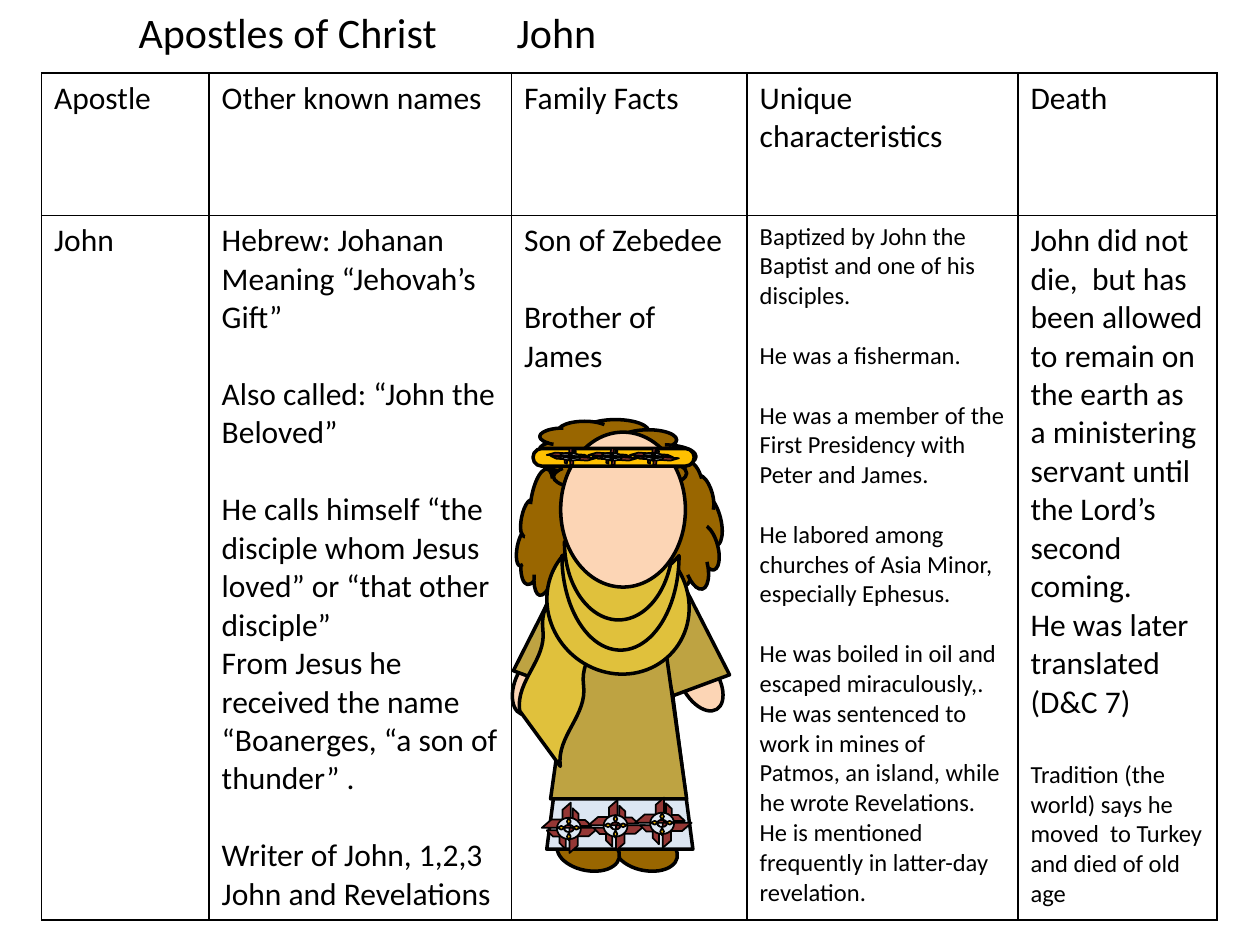
from math import cos, radians, sin

from lxml.etree import SubElement
from pptx import Presentation
from pptx.dml.color import RGBColor
from pptx.enum.shapes import MSO_SHAPE as Shape
from pptx.enum.text import MSO_ANCHOR, MSO_AUTO_SIZE, PP_ALIGN
from pptx.oxml.ns import qn
from pptx.util import Inches, Pt

COLORS = {
    "ink": "000000", "hair": "996600", "skin": "FCD5B5", "robe": "BEA342",
    "shawl": "E0C13C", "trim": "DCE6F2", "petal": "953735", "gold": "FFC000",
}
GRID_COLUMNS, GRID_ROWS = 100, 75
LINE_HEIGHT = 1.22  # Calibri line height as a share of its size


def color(name):
    return RGBColor.from_string(COLORS[name])


class SlideBuilder:
    """Style and current slide; lengths are grid columns and rows."""

    font = "Calibri"

    def __init__(self, deck):
        self.slide = deck.slides.add_slide(deck.slide_layouts[5])
        self.column = deck.slide_width / GRID_COLUMNS
        self.row = deck.slide_height / GRID_ROWS
        self.figure = None

    def box(self, left, top, width, height):
        return (round(left * self.column), round(top * self.row),
                round(width * self.column), round(height * self.row))

    def style(self, paragraph, size):
        paragraph.alignment = PP_ALIGN.LEFT
        paragraph.font.name = self.font
        paragraph.font.size = Pt(size)
        paragraph.font.color.rgb = color("ink")

    def title(self, text, *place):
        title = self.slide.shapes.title
        title.left, title.top, title.width, title.height = self.box(*place)
        frame = title.text_frame
        frame.text = text
        frame.auto_size = MSO_AUTO_SIZE.NONE
        frame.vertical_anchor = MSO_ANCHOR.TOP
        self.style(frame.paragraphs[0], 24)

    def table(self, left, top, widths, heights, content):
        place = self.box(left, top, sum(widths), sum(heights))
        table = self.slide.shapes.add_table(len(heights), len(widths), *place).table
        table.first_row = table.horz_banding = False
        for column, width in zip(table.columns, widths):
            column.width = round(width * self.column)
        for row, height in zip(table.rows, heights):
            row.height = round(height * self.row)
        for row, texts in zip(table.rows, content):
            for cell, blocks in zip(row.cells, texts):
                self.cell(cell, blocks)

    def cell(self, cell, blocks):
        """Fill a cell with (size, gap in points before, text) paragraphs."""
        frame = cell.text_frame
        for index, (size, gap, text) in enumerate(blocks):
            paragraph = frame.add_paragraph() if index else frame.paragraphs[0]
            paragraph.text = text
            paragraph.space_before = Pt(gap)
            self.style(paragraph, size)
        properties = cell._tc.get_or_add_tcPr()
        for edge in ("a:lnL", "a:lnR", "a:lnT", "a:lnB"):
            border = SubElement(properties, qn(edge), w=str(Pt(1)))
            fill = SubElement(border, qn("a:solidFill"))
            SubElement(fill, qn("a:srgbClr"), val=COLORS["ink"])
        cell.fill.background()

    def start_figure(self):
        self.figure = self.slide.shapes.add_group_shape()

    def piece(self, kind, fill, place, turn=0, flip=False, adjust=(), line=2):
        piece = self.figure.shapes.add_shape(kind, *self.box(*place))
        piece.shadow.inherit = False
        piece.rotation = turn % 360
        for index, value in enumerate(adjust):
            piece.adjustments[index] = value
        if flip:
            piece._element.spPr.find(qn("a:xfrm")).set("flipH", "1")
        piece.fill.solid()
        piece.fill.fore_color.rgb = color(fill)
        piece.line.color.rgb = color("ink")
        piece.line.width = Pt(line)

    def flower(self, x, y, across=1.0, down=1.0, tilt=0.0):
        """Draw the flower around (x, y), squeezed and then tilted."""
        angle = radians(tilt)
        for kind, fill, dx, dy, width, height, turn, flip, adjust in FLOWER:
            dx, dy = dx * across, dy * down
            sideways = turn % 180 == 90
            width *= down if sideways else across
            height *= across if sideways else down
            center_x = x + dx * cos(angle) - dy * sin(angle)
            center_y = y + dx * sin(angle) + dy * cos(angle)
            place = (center_x - width / 2, center_y - height / 2, width, height)
            self.piece(kind, fill, place, turn + tilt, flip, adjust, line=1)


# Flower pieces: shape, fill, centre offset, size, turn, flip, adjustments
FLOWER = [
    (Shape.HALF_FRAME, "petal", -1, -1.05, 2.3, 2, 180, False, ()),
    (Shape.HALF_FRAME, "petal", 1.2, 0.95, 2.3, 2, 0, False, ()),
    (Shape.HALF_FRAME, "petal", 1.05, -0.9, 1.4, 1.5, 270, False, ()),
    (Shape.HALF_FRAME, "petal", -1, 0.9, 1.5, 1.5, 0, True, ()),
    (Shape.DONUT, "trim", 0, 0, 1.9, 1.7, 0, False, (0.33,)),
] + [
    (Shape.DIAMOND, "gold", dx, dy, 0.3, 0.6, turn, False, ())
    for dx, dy, turn in [(0, -0.55, 0), (0, 0.65, 0), (-0.6, -0.05, 90), (0.6, -0.05, 90)]
]

# Body from back to front: shape, fill, place, turn, flip, adjustments
BODY = [
    (Shape.OVAL, "hair", (48.8, 66.1, 5, 3), 10.8, True),
    (Shape.OVAL, "hair", (44.2, 66.1, 5, 3), 10.8, True),
    (Shape.TRAPEZOID, "trim", (43.4, 45.3, 11.6, 22.1), 0, True),
    (Shape.OVAL, "skin", (39.8, 52.9, 5, 2.9), 112.1, True),
    (Shape.OVAL, "skin", (53.1, 52.7, 5, 2.9), 59.2, True),
    (Shape.TRAPEZOID, "robe", (42.3, 44.6, 4.4, 9.7), 20.3, True),
    (Shape.TRAPEZOID, "robe", (51.5, 44.6, 4.8, 10.1), 339.7),
    (Shape.CLOUD, "hair", (41.3, 36.4, 5.1, 10.9), 11.2),
    (Shape.CLOUD, "hair", (51.5, 36.9, 5.8, 10), 345.1),
    (Shape.TRAPEZOID, "robe", (43.7, 44.2, 10.8, 19.2), 0, True),
    (Shape.ISOSCELES_TRIANGLE, "skin", (47.3, 45.8, 3.6, 4.9), 180, True),
    (Shape.CLOUD, "hair", (46, 30.1, 6, 12.4), 270),
    (Shape.DOUBLE_WAVE, "shawl", (36.3, 49.7, 16.8, 4.9), 285.9, False, (0.06, -0.1)),
    (Shape.PIE, "shawl", (43.6, 42.1, 10.9, 11.6), 311.6),
    (Shape.MOON, "shawl", (45.5, 43.2, 7.5, 9.3), 270, False, (0.68,)),
    (Shape.MOON, "shawl", (46, 41.8, 6.2, 8.6), 270, False, (0.68,)),
    (Shape.OVAL, "skin", (44.5, 34.3, 9.9, 12.3), 0, True),
]
HEADBAND = (Shape.ROUNDED_RECTANGLE, "gold", (42.3, 35.6, 12.8, 1.4), 0, False, (0.5,))

# Table wording
LARGE, SMALL = 18, 14
LARGE_GAP, SMALL_GAP = LARGE * LINE_HEIGHT, SMALL * LINE_HEIGHT
HEADINGS = ["Apostle", "Other known names", "Family Facts", "Unique characteristics", "Death"]
NAMES = [
    (LARGE, 0, "Hebrew: Johanan"),
    (LARGE, 0, "Meaning “Jehovah’s Gift”"),
    (LARGE, LARGE_GAP, "Also called: “John the Beloved”"),
    (LARGE, LARGE_GAP, "He calls himself “the disciple whom Jesus loved” or “that other disciple”"),
    (LARGE, 0, "From Jesus he received the name “Boanerges, “a son of thunder” ."),
    (LARGE, LARGE_GAP, "Writer of John, 1,2,3 John and Revelations"),
]
FAMILY = [(LARGE, 0, "Son of Zebedee"), (LARGE, LARGE_GAP, "Brother of James")]
CHARACTERISTICS = [
    (SMALL, 0, "Baptized by John the Baptist and one of his disciples."),
    (SMALL, SMALL_GAP, "He was a fisherman."),
    (SMALL, SMALL_GAP, "He was a member of the First Presidency with Peter and James."),
    (SMALL, SMALL_GAP, "He labored among churches of Asia Minor, especially Ephesus."),
    (SMALL, SMALL_GAP, "He was boiled in oil and escaped miraculously,."),
    (SMALL, 0, "He was sentenced to work in mines of Patmos, an island, while he wrote Revelations."),
    (SMALL, 0, "He is mentioned frequently in latter-day revelation."),
]
DEATH = [
    (LARGE, 0, "John did not die,  but has been allowed to remain on the earth as a "
               "ministering servant until the Lord’s second coming."),
    (LARGE, 0, "He was later translated"),
    (LARGE, 0, "(D&C 7)"),
    (SMALL, LARGE_GAP, "Tradition (the world) says he moved  to Turkey and died of old age"),
]


def main():
    deck = Presentation()
    deck.slide_width, deck.slide_height = Inches(10), Inches(7.5)
    builder = SlideBuilder(deck)

    # Heading and facts
    builder.title("Apostles of Christ\t\tJohn", 10, 0, 72.5, 5)
    builder.table(3.3, 5.8, [13.3, 24, 18.7, 21.5, 15.8], [11.3, 55.9], [
        [[(LARGE, 0, heading)] for heading in HEADINGS],
        [[(LARGE, 0, "John")], NAMES, FAMILY, CHARACTERISTICS, DEATH],
    ])

    # Apostle figure with flowers on the hem and the headband
    builder.start_figure()
    for piece in BODY:
        builder.piece(*piece)
    for index in range(3):
        builder.flower(45.15 + 3.7 * index, 65.75 - 0.2 * index)
    builder.piece(*HEADBAND)
    for index in range(3):
        builder.flower(45.25 + 3.3 * index, 36.25, across=0.87, down=0.35, tilt=3.8)

    deck.save("out.pptx")


if __name__ == "__main__":
    main()
